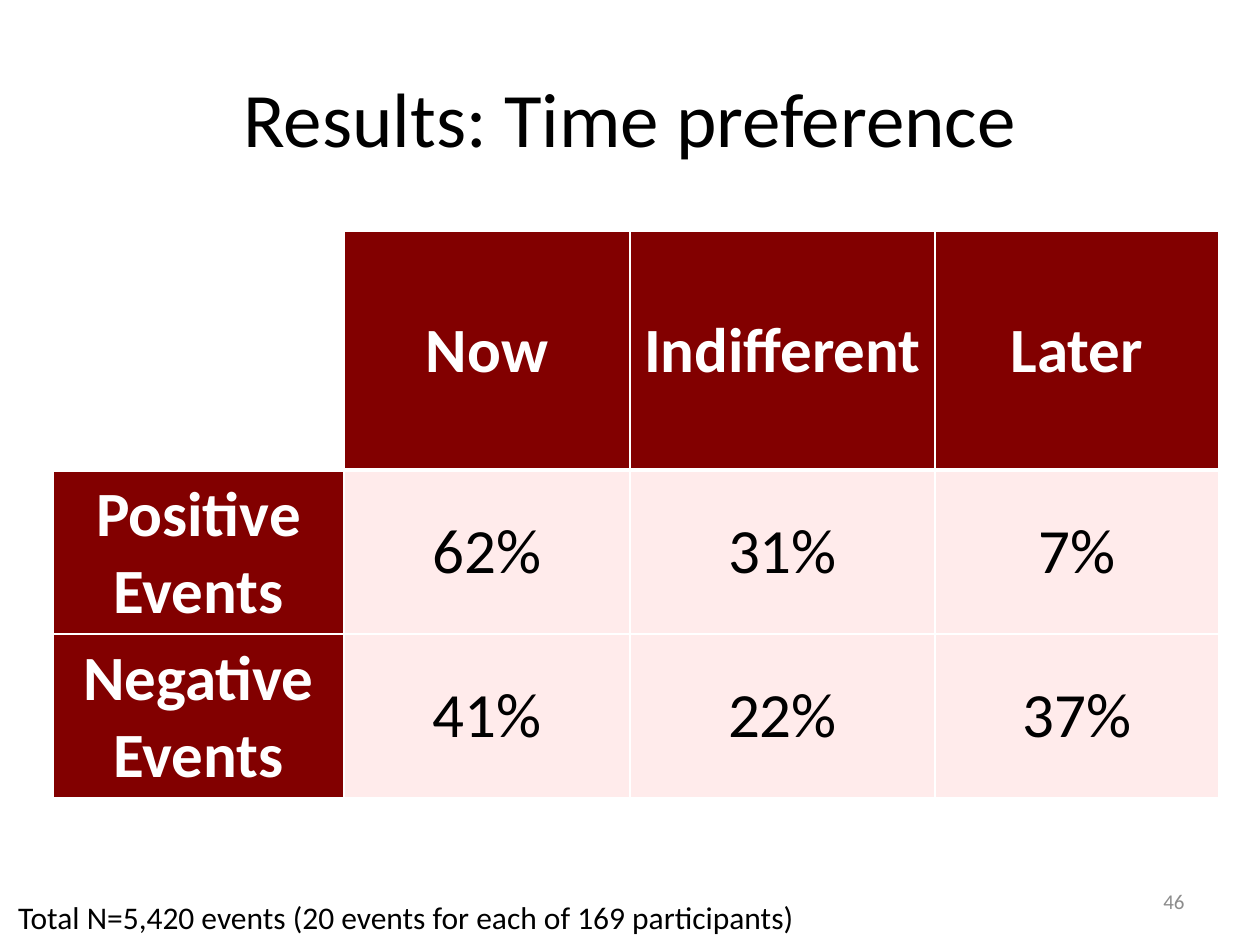
import pptx
import pptx.util
import pptx.dml.color
import pptx.enum.text
import pptx.oxml
import pptx.oxml.ns

TITLE = "Results: Time preference"
ROWS = [
    ["", "Now", "Indifferent", "Later"],
    ["Positive Events", "62%", "31%", "7%"],
    ["Negative Events", "41%", "22%", "37%"],
]
NOTE = "Total N=5,420 events (20 events for each of 169 participants)"
PAGE = "46"

# All lengths are px, 126 to the inch
SLIDE = (1260, 945)
TITLE_BOX = (63, 38, 1134, 158)
PAGE_BOX = (903, 876, 294, 50)
NOTE_BOX = (1, 892, 810, 50)
TABLE_AT = (53, 231)
COL_WIDTHS = (291, 286, 305, 284)
ROW_HEIGHTS = (239, 164, 164)

THEME = {
    "font": "Calibri",
    "white": "FFFFFF", "black": "000000", "grey": "8C8C8C",
    "header": "820000", "body": "FFEBEB",
    "title_size": 44, "table_size": 36, "note_size": 18, "page_size": 12,
    "border": 1, "header_border": 3,
}
ALIGN = pptx.enum.text.PP_ALIGN
ANCHOR = pptx.enum.text.MSO_ANCHOR


def px(n):
    return pptx.util.Emu(round(n * 914400 / 126))


def rgb(name):
    return pptx.dml.color.RGBColor.from_string(THEME[name])


def write(tf, text, size, color, align=ALIGN.CENTER, bold=False):
    p = tf.paragraphs[0]
    p.alignment = align
    r = p.add_run()
    r.text = text
    formats = {"name": THEME["font"], "size": pptx.util.Pt(THEME[size]), "bold": bold}
    for key, value in formats.items():
        setattr(r.font, key, value)
    r.font.color.rgb = rgb(color)


def set_borders(cell, widths):
    """Draw white borders; widths maps L, R, T, B to points."""
    tcPr = cell._tc.get_or_add_tcPr()
    for i, (side, width) in enumerate(widths.items()):
        tcPr.insert(i, pptx.oxml.parse_xml(
            f'<a:ln{side} {pptx.oxml.ns.nsdecls("a")} w="{pptx.util.Pt(width)}">'
            f'<a:solidFill><a:srgbClr val="{THEME["white"]}"/></a:solidFill></a:ln{side}>'))


def add_title(s):
    sp = s.shapes.title
    sp.left, sp.top, sp.width, sp.height = map(px, TITLE_BOX)
    sp.text_frame.vertical_anchor = ANCHOR.MIDDLE
    write(sp.text_frame, TITLE, "title_size", "black")


def add_results(s):
    size = (sum(COL_WIDTHS), sum(ROW_HEIGHTS))
    table = s.shapes.add_table(len(ROWS), len(COL_WIDTHS),
                               *map(px, TABLE_AT + size)).table
    for col, width in zip(table.columns, COL_WIDTHS):
        col.width = px(width)
    for row, height in zip(table.rows, ROW_HEIGHTS):
        row.height = px(height)
    thin, thick = THEME["border"], THEME["header_border"]
    for i, texts in enumerate(ROWS):
        for j, text in enumerate(texts):
            cell = table.cell(i, j)
            is_label = i == 0 or j == 0
            fill = "white" if not text else "header" if is_label else "body"
            cell.fill.solid()
            cell.fill.fore_color.rgb = rgb(fill)
            cell.vertical_anchor = ANCHOR.MIDDLE
            if text:
                write(cell.text_frame, text, "table_size",
                      "white" if is_label else "black", bold=is_label)
            set_borders(cell, {"L": thin, "R": thin,
                               "T": thick if i == 1 else thin,
                               "B": thick if i == 0 else thin})


def add_text(s, box, text, size, color, align, anchor, wrap):
    tf = s.shapes.add_textbox(*map(px, box)).text_frame
    tf.word_wrap = wrap
    tf.vertical_anchor = anchor
    write(tf, text, size, color, align)
    return tf


def main():
    prs = pptx.Presentation()
    prs.slide_width, prs.slide_height = map(px, SLIDE)
    s = prs.slides.add_slide(prs.slide_layouts[5])
    add_title(s)
    add_text(s, PAGE_BOX, PAGE, "page_size", "grey", ALIGN.RIGHT, ANCHOR.MIDDLE, True)
    add_results(s)
    note = add_text(s, NOTE_BOX, NOTE, "note_size", "black",
                    ALIGN.CENTER, ANCHOR.TOP, False)
    note.auto_size = pptx.enum.text.MSO_AUTO_SIZE.SHAPE_TO_FIT_TEXT
    prs.save("out.pptx")


if __name__ == "__main__":
    main()
